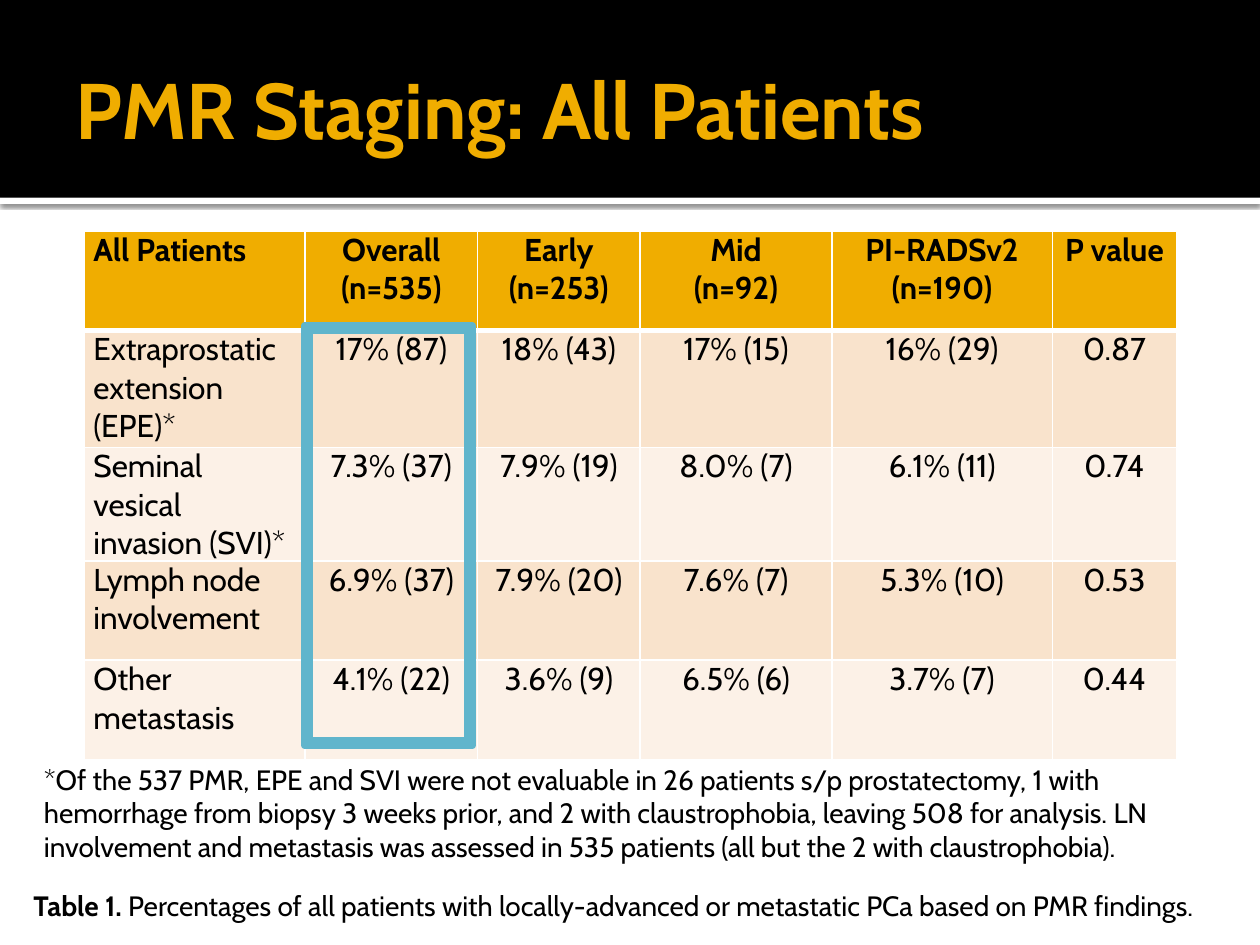
import dataclasses

import lxml.etree
import pptx
import pptx.dml.color
import pptx.enum.shapes
import pptx.enum.text
import pptx.oxml.ns
import pptx.util

Pt = pptx.util.Pt
qn = pptx.oxml.ns.qn
SubElement = lxml.etree.SubElement
Shapes = pptx.enum.shapes.MSO_SHAPE
Align = pptx.enum.text.PP_ALIGN
Anchor = pptx.enum.text.MSO_ANCHOR

COLORS = {
    "black": "000000",
    "white": "FFFFFF",
    "gold": "F0AD00",
    "peach": "F9E3CC",
    "cream": "FCF1E7",
    "blue": "60B5CC",
}
FONT = "Cabin"
COLUMN_WIDTHS = [126, 98.5, 93, 109.5, 126, 71]
ROW_HEIGHTS = [56.7, 67, 56.7, 56.7, 56.7]
FINDINGS = [
    ["All Patients", "Overall (n=535)", "Early (n=253)", "Mid\n(n=92)", "PI-RADSv2 (n=190)", "P value"],
    ["Extraprostatic extension (EPE)*", "17% (87)", "18% (43)", "17% (15)", "16% (29)", "0.87"],
    ["Seminal vesical invasion (SVI)*", "7.3% (37)", "7.9% (19)", "8.0% (7)", "6.1% (11)", "0.74"],
    ["Lymph node involvement", "6.9% (37)", "7.9% (20)", "7.6% (7)", "5.3% (10)", "0.53"],
    ["Other metastasis", "4.1% (22)", "3.6% (9)", "6.5% (6)", "3.7% (7)", "0.44"],
]
FOOTNOTE = (
    "*Of the 537 PMR, EPE and SVI were not evaluable in 26 patients s/p prostatectomy, 1 with "
    "hemorrhage from biopsy 3 weeks prior, and 2 with claustrophobia, leaving 508 for analysis. "
    "LN involvement and metastasis was assessed in 535 patients (all but the 2 with claustrophobia)."
)
CAPTION = "Percentages of all patients with locally-advanced or metastatic PCa based on PMR findings."


@dataclasses.dataclass
class Box:
    left: float
    top: float
    width: float
    height: float

    def lengths(self) -> list:
        return [Pt(v) for v in (self.left, self.top, self.width, self.height)]


def rgb(color: str) -> pptx.dml.color.RGBColor:
    return pptx.dml.color.RGBColor.from_string(COLORS[color])


def add_run(paragraph, text: str, *, size: float, color: str = "black", bold: bool = False) -> None:
    run = paragraph.add_run()
    run.text = text
    run.font.name = FONT
    run.font.size = Pt(size)
    run.font.bold = bold
    run.font.color.rgb = rgb(color)


def write(frame, text: str, *, align=Align.LEFT, **font) -> None:
    for index, line in enumerate(text.split("\n")):
        paragraph = frame.add_paragraph() if index else frame.paragraphs[0]
        paragraph.alignment = align
        add_run(paragraph, line, **font)


def add_text_frame(slide, box: Box):
    frame = slide.shapes.add_textbox(*box.lengths()).text_frame
    frame.word_wrap = True
    return frame


def add_block(slide, kind, box: Box, color: str):
    block = slide.shapes.add_shape(kind, *box.lengths())
    block.shadow.inherit = False
    block.fill.solid()
    block.fill.fore_color.rgb = rgb(color)
    block.line.fill.background()
    return block


def add_drop_shadow(block) -> None:
    effects = block._element.spPr.find(qn("a:effectLst"))
    shadow = SubElement(effects, qn("a:outerShdw"), blurRad=str(Pt(2.5)), dist=str(Pt(0.8)),
                        dir="5400000", algn="t", rotWithShape="0")
    tint = SubElement(shadow, qn("a:srgbClr"), val=COLORS["black"])
    SubElement(tint, qn("a:alpha"), val="60000")


def set_borders(cell, bottom: float, top: float) -> None:
    properties = cell._tc.get_or_add_tcPr()
    sides = {"a:lnL": 1, "a:lnR": 1, "a:lnT": top, "a:lnB": bottom}
    for position, (side, width) in enumerate(sides.items()):
        line = lxml.etree.Element(qn(side), w=str(Pt(width)))
        fill = SubElement(line, qn("a:solidFill"))
        SubElement(fill, qn("a:srgbClr"), val=COLORS["white"])
        properties.insert(position, line)


def add_findings_table(slide, box: Box) -> None:
    table = slide.shapes.add_table(len(FINDINGS), len(COLUMN_WIDTHS), *box.lengths()).table
    for column, width in zip(table.columns, COLUMN_WIDTHS):
        column.width = Pt(width)
    for r, (values, height) in enumerate(zip(FINDINGS, ROW_HEIGHTS)):
        table.rows[r].height = Pt(height)
        fill = "gold" if r == 0 else ("peach" if r % 2 else "cream")
        for c, value in enumerate(values):
            cell = table.cell(r, c)
            cell.margin_left = cell.margin_right = Pt(5)
            cell.margin_top = cell.margin_bottom = Pt(0)
            cell.fill.solid()
            cell.fill.fore_color.rgb = rgb(fill)
            set_borders(cell, bottom=3 if r == 0 else 1, top=3 if r == 1 else 1)
            write(cell.text_frame, value, align=Align.CENTER if c else Align.LEFT, size=18, bold=r == 0)


def main() -> None:
    """Build the PMR staging slide and save it."""
    deck = pptx.Presentation()
    deck.slide_width, deck.slide_height = Pt(720), Pt(540)
    slide = deck.slides.add_slide(deck.slide_layouts[6])

    divider = add_block(slide, Shapes.RECTANGLE, Box(0, 113, 720, 3.6), "white")
    add_drop_shadow(divider)
    add_block(slide, Shapes.RECTANGLE, Box(0, 0, 720, 113), "black")

    title = add_text_frame(slide, Box(36, 12.24, 648, 98.64))
    title.vertical_anchor = Anchor.MIDDLE
    title.margin_right = Pt(3.6)
    write(title, "PMR Staging: All Patients", size=45, color="gold", bold=True)

    add_findings_table(slide, Box(48.4, 132, sum(COLUMN_WIDTHS), sum(ROW_HEIGHTS)))

    footnote = add_text_frame(slide, Box(18, 432, 702, 65.5))
    write(footnote, FOOTNOTE, size=16)

    caption = add_text_frame(slide, Box(12, 504, 708, 26.6))
    write(caption, "Table 1. ", size=16, bold=True)
    add_run(caption.paragraphs[0], CAPTION, size=16)

    highlight = add_block(slide, Shapes.FRAME, Box(174, 186, 96, 240), "blue")
    highlight.adjustments[0] = 0.03
    highlight.line.color.rgb = rgb("blue")
    highlight.line.width = Pt(3.78)

    deck.save("out.pptx")


if __name__ == "__main__":
    main()
